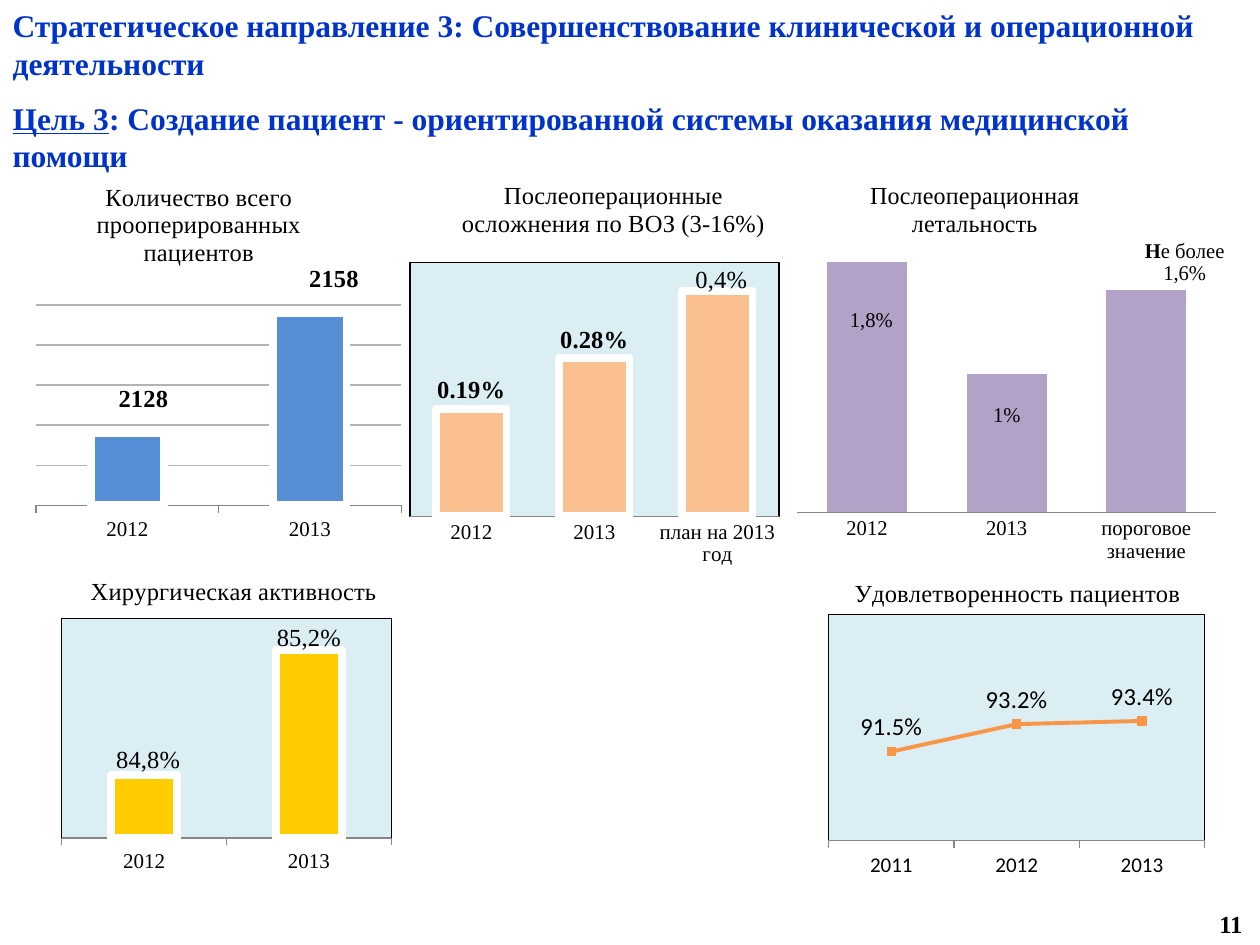
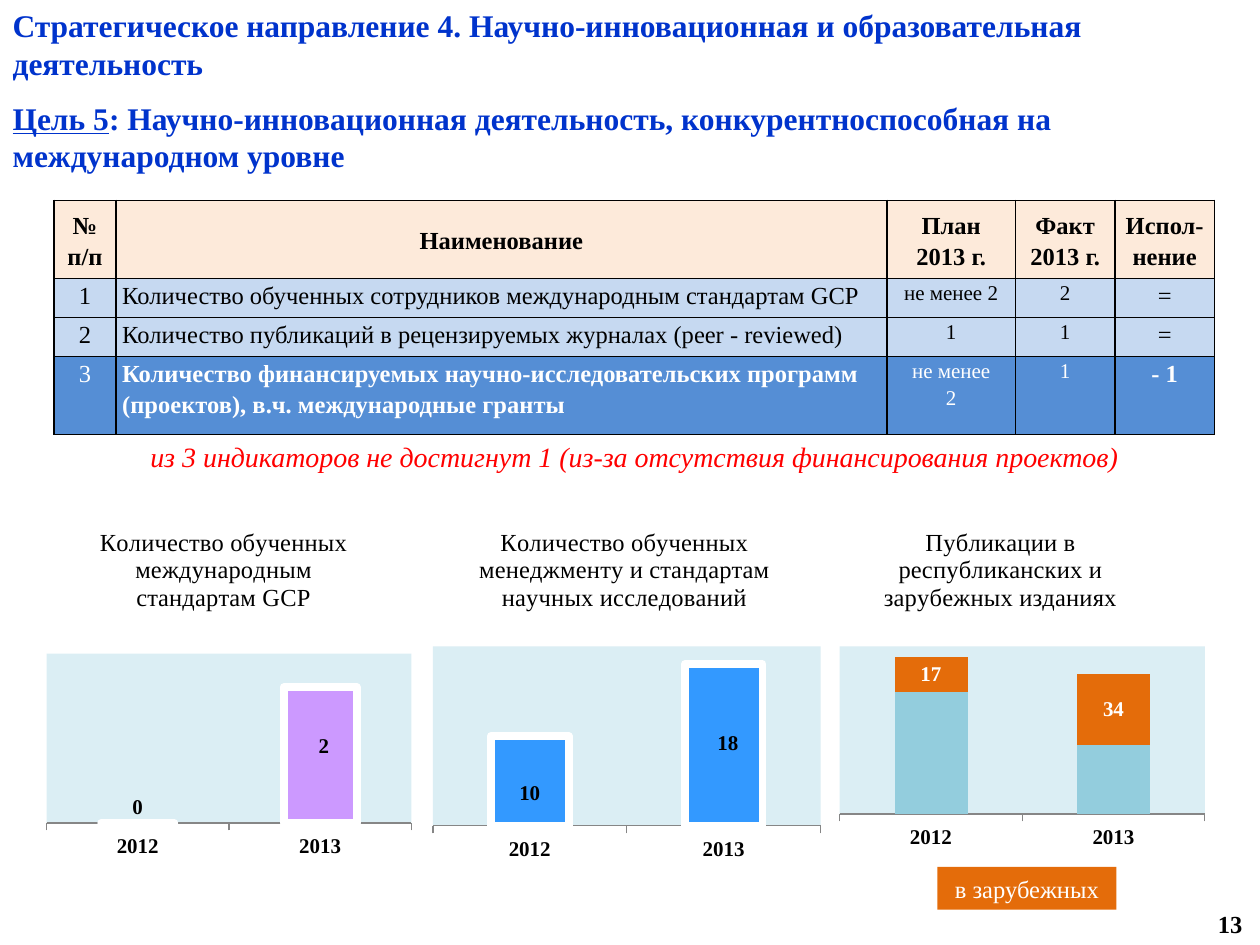
from pptx import Presentation
from pptx import oxml
from pptx import util as u
from pptx.chart import data
from pptx.dml.color import RGBColor
from pptx.enum import chart as ch
from pptx.enum import shapes, text
from pptx.oxml import ns

HUES = {
    "blue": "0033CC", "black": "000000", "white": "FFFFFF", "red": "FF0000",
    "pale": "DBEEF4", "sky": "558ED5", "peach": "FAC090", "lilac": "B3A2C7",
    "gold": "FFCC00", "orange": "F79646", "rust": "E46C0A", "violet": "CC99FF",
    "azure": "3399FF", "aqua": "93CDDD", "cream": "FDEADA", "mist": "C6D9F1",
    "gray": "868686", "grid": "B3B3B3",
}
HUE = {name: RGBColor.from_string(code) for name, code in HUES.items()}
SERIF = "Times New Roman"
KIND = ch.XL_CHART_TYPE
POS = ch.XL_LABEL_POSITION
TICK = ch.XL_TICK_MARK
MID = text.PP_ALIGN.CENTER
LEFT = text.PP_ALIGN.LEFT
RIGHT = text.PP_ALIGN.RIGHT


def write(para, words, size, hue="black", bold=False, italic=False, line=None):
    run = para.add_run()
    run.text = words
    font = run.font
    font.name, font.size = SERIF, u.Pt(size)
    font.bold, font.italic, font.underline = bold, italic, line
    font.color.rgb = HUE[hue]


def place(node, index, edge, **sizes):
    for old in node.findall(ns.qn("c:layout")):
        node.remove(old)
    parts = '<c:layoutTarget val="inner"/>' if "w" in sizes else ""
    if edge:
        parts += '<c:xMode val="edge"/><c:yMode val="edge"/>'
    parts += "".join(f'<c:{key} val="{val}"/>' for key, val in sizes.items())
    node.insert(index, oxml.parse_xml(
        f'<c:layout {ns.nsdecls("c")}><c:manualLayout>{parts}</c:manualLayout></c:layout>'))


deck = Presentation()
deck.slide_width, deck.slide_height = u.Inches(10), u.Inches(7.5)
unit = deck.slide_width // 100

HEADS = [
    ("Стратегическое направление 3: Совершенствование клинической и операционной деятельности",
     "Цель 3", ": Создание пациент - ориентированной системы оказания медицинской помощи"),
    ("Стратегическое направление 4. Научно-инновационная и образовательная деятельность",
     "Цель 5", ": Научно-инновационная деятельность, конкурентноспособная на международном уровне"),
]
pages = []
for top, goal, rest in HEADS:
    page = deck.slides.add_slide(deck.slide_layouts[5])
    head = page.shapes.title
    head.left, head.top, head.width, head.height = 0, 0, 100 * unit, int(14.5 * unit)
    frame = head.text_frame
    frame.auto_size = text.MSO_AUTO_SIZE.SHAPE_TO_FIT_TEXT
    frame.vertical_anchor = text.MSO_ANCHOR.TOP
    first, second = frame.paragraphs[0], frame.add_paragraph()
    first.alignment = second.alignment = LEFT
    second.space_before = u.Pt(9.5)
    write(first, top, 18, "blue", True)
    write(second, goal, 18, "blue", True, line=True)
    write(second, rest, 18, "blue", True)
    pages.append(page)

YEARS = ["2012", "2013"]
CHARTS = [
    dict(page=0, at=(63.4, 43.8, 33.9, 27.6), kind=KIND.LINE_MARKERS,
         title="Удовлетворенность пациентов", spot=(.12, .06),
         cats=["2011", "2012", "2013"], rows=[(.915, .932, .934)], hues=["orange"],
         span=(.86, 1), plot=(.07, .18, .88, .65), back=True, frame=True,
         form="0.0%", size=14, bold=False, face="Calibri"),
    dict(page=0, at=(62.6, 13.9, 34.6, 31.5), kind=KIND.COLUMN_STACKED,
         title="Послеоперационная летальность", spot=(.18, 0),
         cats=YEARS + ["пороговое значение"], rows=[(.018, .01, .016)], hues=["lilac"],
         span=(0, .02), plot=(.02, .15, .98, .7), gap=75, tick=TICK.NONE, form="0%",
         tips={0: ([[("1,8%", False)]], .01, -.17), 1: ([[("1%", False)]], 0, -.07),
               2: ([[("Н", True), ("е более", False)], [("1,6%", False)]], .09, -.35)}),
    dict(page=0, at=(31.9, 13.9, 31.5, 31.5), kind=KIND.COLUMN_CLUSTERED,
         title="Послеоперационные осложнения по ВОЗ (3-16%)", spot=(.14, 0),
         cats=YEARS + ["план на 2013 год"], rows=[(.0019, .0028, .004)], hues=["peach"],
         span=(0, .0045), plot=(.02, .22, .93, .64), gap=75, tick=TICK.NONE,
         back=True, frame=True, edge=True, form="0.00%", size=14,
         tips={2: ([[("0,4%", False)]], .01, .02)}),
    dict(page=0, at=(0, 13.1, 31.9, 30.7), kind=KIND.COLUMN_CLUSTERED,
         title="Количество всего прооперированных пациентов", spot=(.23, .03),
         cats=YEARS, rows=[(2128, 2158)], hues=["sky"], span=(2110, 2165),
         plot=(.09, .31, .91, .57), edge=True, grid=True, size=14,
         tips={0: (None, .04, -.04), 1: (None, .06, -.04)}),
    dict(page=0, at=(2, 44, 32.3, 26.8), kind=KIND.COLUMN_CLUSTERED,
         title="Хирургическая активность", spot=(.15, .05),
         cats=YEARS, rows=[(.848, .852)], hues=["gold"], span=(.846, .853),
         plot=(.09, .19, .81, .65), back=True, frame=True, edge=True, size=14,
         tips={0: ([[("84,8%", False)]], .01, .01), 1: ([[("85,2%", False)]], 0, .02)}),
    dict(page=1, at=(2.8, 41.4, 29.9, 29.9), kind=KIND.COLUMN_CLUSTERED,
         title="Количество обученных международным стандартам GCP", spot=(.16, 0),
         cats=YEARS, rows=[(0, 2)], hues=["violet"], span=(0, 2.5),
         plot=(.03, .35, .97, .45), back=True, edge=True, heavy=True,
         tips={1: (None, .01, .2)}),
    dict(page=1, at=(32.7, 41.4, 33.1, 29.1), kind=KIND.COLUMN_CLUSTERED,
         title="Количество обученных менеджменту и стандартам научных исследований",
         spot=(.15, 0), cats=YEARS, rows=[(10, 18)], hues=["azure"], span=(0, 20),
         plot=(.05, .34, .93, .49), back=True, edge=True, heavy=True,
         tips={0: (None, 0, .2), 1: (None, .01, .26)}),
    dict(page=1, at=(65.7, 41.4, 31.5, 28.3), kind=KIND.COLUMN_STACKED,
         title="Публикации в республиканских и зарубежных изданиях", spot=(.13, 0),
         cats=YEARS, rows=[(58, 33), (17, 34)], hues=["aqua", "rust"], span=(0, 80),
         plot=(.03, .35, .92, .47), back=True, heavy=True, ink="white"),
]
SPOTS = {KIND.LINE_MARKERS: POS.ABOVE, KIND.COLUMN_STACKED: POS.CENTER,
         KIND.COLUMN_CLUSTERED: POS.OUTSIDE_END}

for item in CHARTS:
    get = item.get
    feed = data.CategoryChartData()
    feed.categories = item["cats"]
    for num, row in enumerate(item["rows"], 1):
        feed.add_series(f"Series {num}" if item["kind"] != KIND.LINE_MARKERS else item["title"], row)
    area = [int(n * unit) for n in item["at"]]
    chart = pages[item["page"]].shapes.add_chart(item["kind"], *area, feed).chart
    chart.has_legend = False
    chart.font.name, chart.font.size = "Calibri", u.Pt(10)
    chart.font.color.rgb = HUE["black"]
    write(chart.chart_title.text_frame.paragraphs[0], item["title"], 14)
    x, y = item["spot"]
    place(chart.element.xpath("c:chart/c:title")[0], 1, True, x=x, y=y)

    face = get("face", SERIF)
    axis = chart.category_axis
    axis.major_tick_mark = get("tick", TICK.OUTSIDE)
    axis.has_major_gridlines = False
    axis.format.line.color.rgb = HUE["gray"]
    font = axis.tick_labels.font
    font.name, font.size, font.bold = face, u.Pt(12), get("heavy", False)
    scale = chart.value_axis
    scale.minimum_scale, scale.maximum_scale = item["span"]
    scale.has_major_gridlines = get("grid", False)
    if get("grid"):
        scale.major_unit = 10
        scale.major_gridlines.format.line.color.rgb = HUE["grid"]
    scale.visible = False

    plot = chart.plots[0]
    plot.vary_by_categories = False
    for line, hue in zip(plot.series, item["hues"]):
        if item["kind"] == KIND.LINE_MARKERS:
            line.smooth = False
            line.format.line.width = u.Pt(2.25)
            line.format.line.color.rgb = HUE[hue]
            line.marker.style, line.marker.size = ch.XL_MARKER_STYLE.SQUARE, 5
            line.marker.format.fill.solid()
            line.marker.format.fill.fore_color.rgb = HUE[hue]
            line.marker.format.line.color.rgb = HUE[hue]
        else:
            plot.gap_width = get("gap", 150)
            line.invert_if_negative = False
            line.format.fill.solid()
            line.format.fill.fore_color.rgb = HUE[hue]
            if get("edge"):
                line.format.line.width = u.Pt(4.5)
                line.format.line.color.rgb = HUE["white"]

    size = get("size", 12)
    tags = line.data_labels
    tags.show_value = True
    tags.position = SPOTS[item["kind"]]
    tags.number_format, tags.number_format_is_linked = get("form", "General"), False
    tags.font.name, tags.font.size, tags.font.bold = face, u.Pt(size), get("bold", True)
    tags.font.color.rgb = HUE[get("ink", "black")]
    for num, (lines, dx, dy) in get("tips", {}).items():
        tip = line.points[num].data_label
        if lines:
            frame = tip.text_frame
            for row, runs in enumerate(lines):
                para = frame.add_paragraph() if row else frame.paragraphs[0]
                for words, bold in runs:
                    write(para, words, size, bold=bold)
        else:
            tip.font.name, tip.font.size, tip.font.bold = face, u.Pt(size), True
        tip.position = SPOTS[item["kind"]]
        if dx or dy:
            node = chart.element.xpath(f'.//c:dLbl[c:idx/@val="{num}"]')[0]
            place(node, 1, False, x=dx, y=dy)
    for lead in chart.element.xpath(".//c:showLeaderLines"):
        lead.set("val", "0")

    zone = chart.element.xpath("c:chart/c:plotArea")[0]
    place(zone, 0, True, **dict(zip("xywh", item["plot"])))
    if get("back"):
        rim = f'<a:solidFill><a:srgbClr val="{HUES["black"]}"/></a:solidFill>' if get("frame") else "<a:noFill/>"
        zone.append(oxml.parse_xml(
            f'<c:spPr {ns.nsdecls("c", "a")}><a:solidFill><a:srgbClr val="{HUES["pale"]}"/></a:solidFill>'
            f'<a:ln w="9525">{rim}</a:ln></c:spPr>'))

COLS = [4.9, 61.2, 10.2, 7.9, 7.9]
ROWS = [6.2, 3.1, 3.1, 6.2]
FILLS = ["cream", "mist", "mist", "sky"]
CELLS = [
    ["№ п/п", "Наименование", "План\n2013 г.", "Факт\n2013 г.", "Испол-нение"],
    ["1", "Количество обученных сотрудников международным стандартам GCP", "не менее 2", "2", "="],
    ["2", "Количество публикаций в рецензируемых журналах (peer - reviewed)", "1", "1", "="],
    ["3", "Количество финансируемых научно-исследовательских программ (проектов), в.ч. международные гранты",
     "не менее\n2", "1", "- 1"],
]
area = [int(n * unit) for n in (4.3, 15.9, sum(COLS), sum(ROWS))]
table = pages[1].shapes.add_table(len(ROWS), len(COLS), *area).table
table.first_row = table.horz_banding = False
for col, wide in zip(table.columns, COLS):
    col.width = int(wide * unit)
for r, (row, high) in enumerate(zip(table.rows, ROWS)):
    row.height = int(high * unit)
    for c, cell in enumerate(row.cells):
        cell.margin_left = cell.margin_right = unit // 2
        cell.margin_top = cell.margin_bottom = 0
        cell.vertical_anchor = text.MSO_ANCHOR.TOP if r else text.MSO_ANCHOR.MIDDLE
        props = cell._tc.get_or_add_tcPr()
        for side in "LRTB":
            props.append(oxml.parse_xml(
                f'<a:ln{side} {ns.nsdecls("a")} w="12700"><a:solidFill>'
                f'<a:srgbClr val="{HUES["black"]}"/></a:solidFill></a:ln{side}>'))
        cell.fill.solid()
        cell.fill.fore_color.rgb = HUE[FILLS[r]]
        for num, words in enumerate(CELLS[r][c].split("\n")):
            para = cell.text_frame.add_paragraph() if num else cell.text_frame.paragraphs[0]
            para.alignment = LEFT if r and c == 1 else MID
            para.line_spacing = 1.15
            write(para, words, 12 if r and c in (2, 3) else 14,
                  "white" if r == 3 else "black", r == 0 or (r == 3 and c in (1, 4)))

NOTES = [
    (0, (76.3, 71.3, 23.3, 4), "11", 14, "black", True, False, RIGHT, None),
    (1, (76.3, 71.3, 23.3, 4), "13", 14, "black", True, False, RIGHT, None),
    (1, (4.3, 34.4, 92.1, 3.7), "из 3 индикаторов не достигнут 1 (из-за отсутствия финансирования проектов)",
     16, "red", False, True, MID, None),
    (1, (74.4, 68.8, 14.2, 3.4), "в зарубежных", 14, "white", False, False, MID, "rust"),
]
for num, at, words, size, hue, bold, italic, align, fill in NOTES:
    area = [int(n * unit) for n in at]
    if fill:
        box = pages[num].shapes.add_shape(shapes.MSO_SHAPE.RECTANGLE, *area)
        box.shadow.inherit = False
        box.fill.solid()
        box.fill.fore_color.rgb = HUE[fill]
        box.line.fill.background()
    else:
        box = pages[num].shapes.add_textbox(*area)
    frame = box.text_frame
    frame.word_wrap = True
    frame.vertical_anchor = text.MSO_ANCHOR.MIDDLE
    frame.paragraphs[0].alignment = align
    write(frame.paragraphs[0], words, size, hue, bold, italic)

deck.save("out.pptx")
